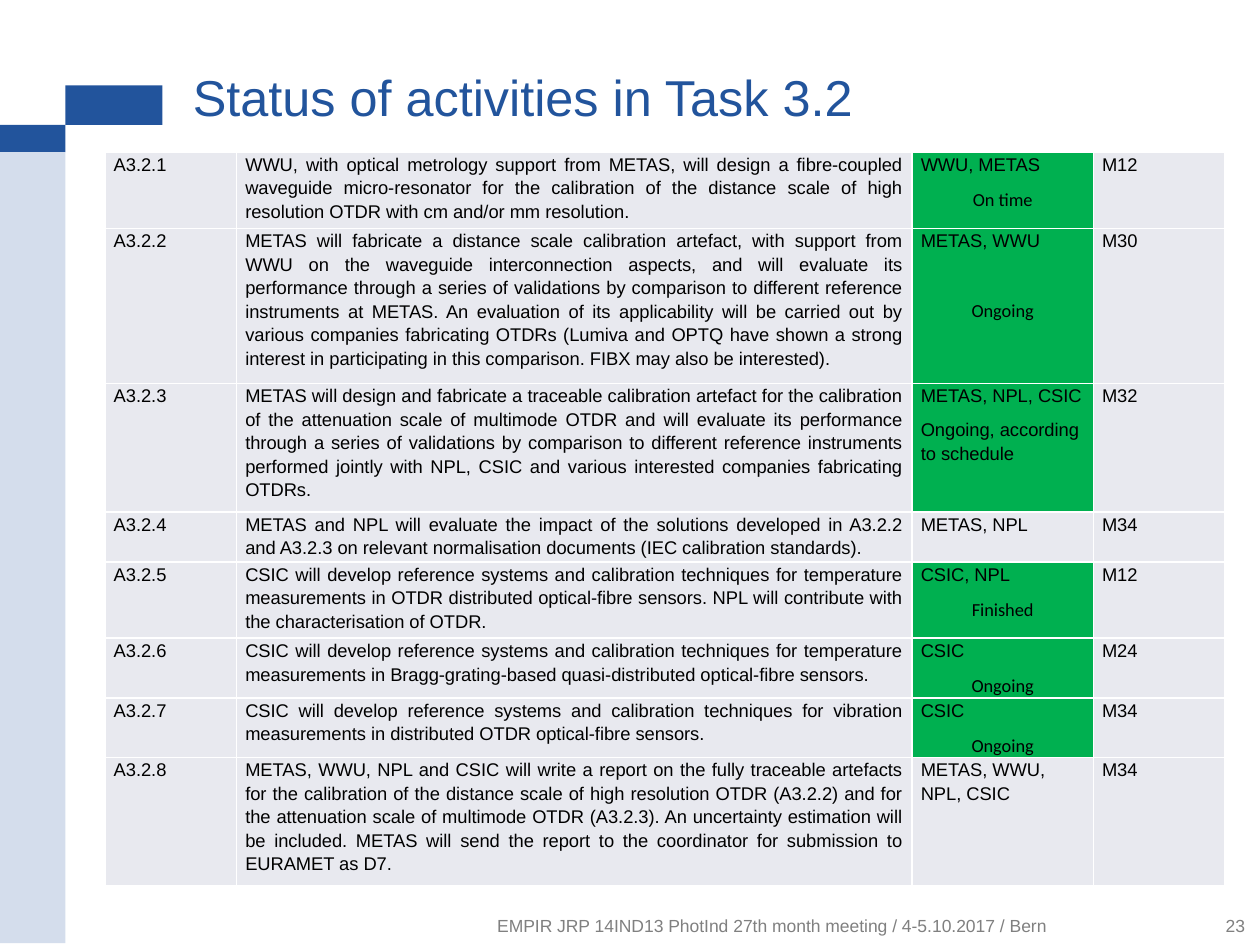
from lxml import etree
from pptx import Presentation
from pptx.dml.color import RGBColor
from pptx.enum import shapes, text
from pptx.oxml import ns
from pptx.util import Pt

COLORS = {
    "blue": "22549C",
    "pale_blue": "D4DDEC",
    "cell": "E8E9EF",
    "green": "00B050",
    "border": "FFFFFF",
    "body": "000000",
    "footer": "808080",
}
LEFT, CENTER, RIGHT, JUSTIFY = (
    text.PP_ALIGN.LEFT, text.PP_ALIGN.CENTER, text.PP_ALIGN.RIGHT, text.PP_ALIGN.JUSTIFY)


def write(paragraph, words, size=10.5, font="Arial", color="body", align=LEFT,
          line=None, before=0, after=0):
    paragraph.alignment = align
    paragraph.line_spacing = line
    paragraph.space_before = Pt(before)
    paragraph.space_after = Pt(after)
    run = paragraph.add_run()
    run.text = words
    run.font.size = Pt(size)
    run.font.name = font
    run.font.color.rgb = RGBColor.from_string(COLORS[color])


def add_borders(cell):
    properties = cell._tc.get_or_add_tcPr()
    for position, side in enumerate(("lnL", "lnR", "lnT", "lnB")):
        border = etree.Element(ns.qn(f"a:{side}"), w=str(Pt(1)))
        fill = etree.SubElement(border, ns.qn("a:solidFill"))
        etree.SubElement(fill, ns.qn("a:srgbClr"), val=COLORS["border"])
        properties.insert(position, border)


presentation = Presentation()
presentation.slide_width = Pt(720)
presentation.slide_height = Pt(540)
slide = presentation.slides.add_slide(presentation.slide_layouts[6])

for left, top, width, height, color in [
    (37.4, 48.8, 55.4, 22.6, "blue"),
    (0, 71.4, 37.4, 15.6, "blue"),
    (0, 87, 37.4, 452, "pale_blue"),
]:
    bar = slide.shapes.add_shape(
        shapes.MSO_SHAPE.RECTANGLE, Pt(left), Pt(top), Pt(width), Pt(height))
    bar.shadow.inherit = False
    bar.fill.solid()
    bar.fill.fore_color.rgb = RGBColor.from_string(COLORS[color])
    bar.line.fill.background()

activities = [
    (43.7, "WWU, with optical metrology support from METAS, will design a fibre‑coupled waveguide micro-resonator for the calibration of the distance scale of high resolution OTDR with cm and/or mm resolution.",
     "WWU, METAS", "On time", "M12"),
    (88.6, "METAS will fabricate a distance scale calibration artefact, with support from WWU on the waveguide interconnection aspects, and will evaluate its performance through a series of validations by comparison to different reference instruments at METAS. An evaluation of its applicability will be carried out by various companies fabricating OTDRs (Lumiva and OPTQ have shown a strong interest in participating in this comparison. FIBX may also be interested).",
     "METAS, WWU", "Ongoing", "M30"),
    (73.4, "METAS will design and fabricate a traceable calibration artefact for the calibration of the attenuation scale of multimode OTDR and will evaluate its performance through a series of validations by comparison to different reference instruments performed jointly with NPL, CSIC and various interested companies fabricating OTDRs.",
     "METAS, NPL, CSIC", "Ongoing, according to schedule", "M32"),
    (28.6, "METAS and NPL will evaluate the impact of the solutions developed in A3.2.2 and A3.2.3 on relevant normalisation documents (IEC calibration standards).",
     "METAS, NPL", "", "M34"),
    (43.7, "CSIC will develop reference systems and calibration techniques for temperature measurements in OTDR distributed optical-fibre sensors. NPL will contribute with the characterisation of OTDR.",
     "CSIC, NPL", "Finished", "M12"),
    (34, "CSIC will develop reference systems and calibration techniques for temperature measurements in Bragg-grating-based quasi-distributed optical-fibre sensors.",
     "CSIC", "Ongoing", "M24"),
    (34, "CSIC will develop reference systems and calibration techniques for vibration measurements in distributed OTDR optical-fibre sensors.",
     "CSIC", "Ongoing", "M34"),
    (73.4, "METAS, WWU, NPL and CSIC will write a report on the fully traceable artefacts for the calibration of the distance scale of high resolution OTDR (A3.2.2) and for the attenuation scale of multimode OTDR (A3.2.3). An uncertainty estimation will be included. METAS will send the report to the coordinator for submission to EURAMET as D7.",
     "METAS, WWU, NPL, CSIC", "", "M34"),
]
column_widths = [75.2, 386, 103.6, 75.4]
table = slide.shapes.add_table(
    len(activities), len(column_widths), Pt(60), Pt(86.8),
    Pt(sum(column_widths)), Pt(sum(activity[0] for activity in activities))).table
table.first_row = False
table.horz_banding = False
for column, width in zip(table.columns, column_widths):
    column.width = Pt(width)

for number, (height, description, partners, status, month) in enumerate(activities, 1):
    row = table.rows[number - 1]
    row.height = Pt(height)
    contents = [f"A3.2.{number}", description, partners, month]
    for index, (cell, words) in enumerate(zip(row.cells, contents)):
        cell.margin_left = cell.margin_right = Pt(5)
        cell.margin_top = cell.margin_bottom = 0
        cell.fill.solid()
        fill = "green" if index == 2 and status else "cell"
        cell.fill.fore_color.rgb = RGBColor.from_string(COLORS[fill])
        add_borders(cell)
        write(cell.text_frame.paragraphs[0], words, line=1.15, after=3,
              align=JUSTIFY if index < 2 else LEFT)
    if status:
        long_status = "," in status
        write(row.cells[2].text_frame.add_paragraph(), status, line=1.15, after=3,
              before=23 if number == 2 else 3,
              font="Arial" if long_status else "Calibri",
              align=LEFT if long_status else CENTER)

footer_format = dict(size=10, color="footer", align=RIGHT)
for left, top, width, height, anchor, words, style in [
    (110.2, 43.2, 589.7, 28.1, text.MSO_ANCHOR.TOP, "Status of activities in Task 3.2",
     dict(size=28.8, color="blue", line=Pt(29))),
    (676, 524.9, 35.4, 10, text.MSO_ANCHOR.BOTTOM, "23", footer_format),
    (110.2, 523.4, 487.6, 11.5, text.MSO_ANCHOR.BOTTOM,
     "EMPIR JRP 14IND13 PhotInd 27th month meeting / 4-5.10.2017 / Bern", footer_format),
]:
    frame = slide.shapes.add_textbox(Pt(left), Pt(top), Pt(width), Pt(height)).text_frame
    frame.word_wrap = True
    frame.vertical_anchor = anchor
    frame.margin_left = frame.margin_right = frame.margin_top = frame.margin_bottom = 0
    write(frame.paragraphs[0], words, **style)

presentation.save("out.pptx")
